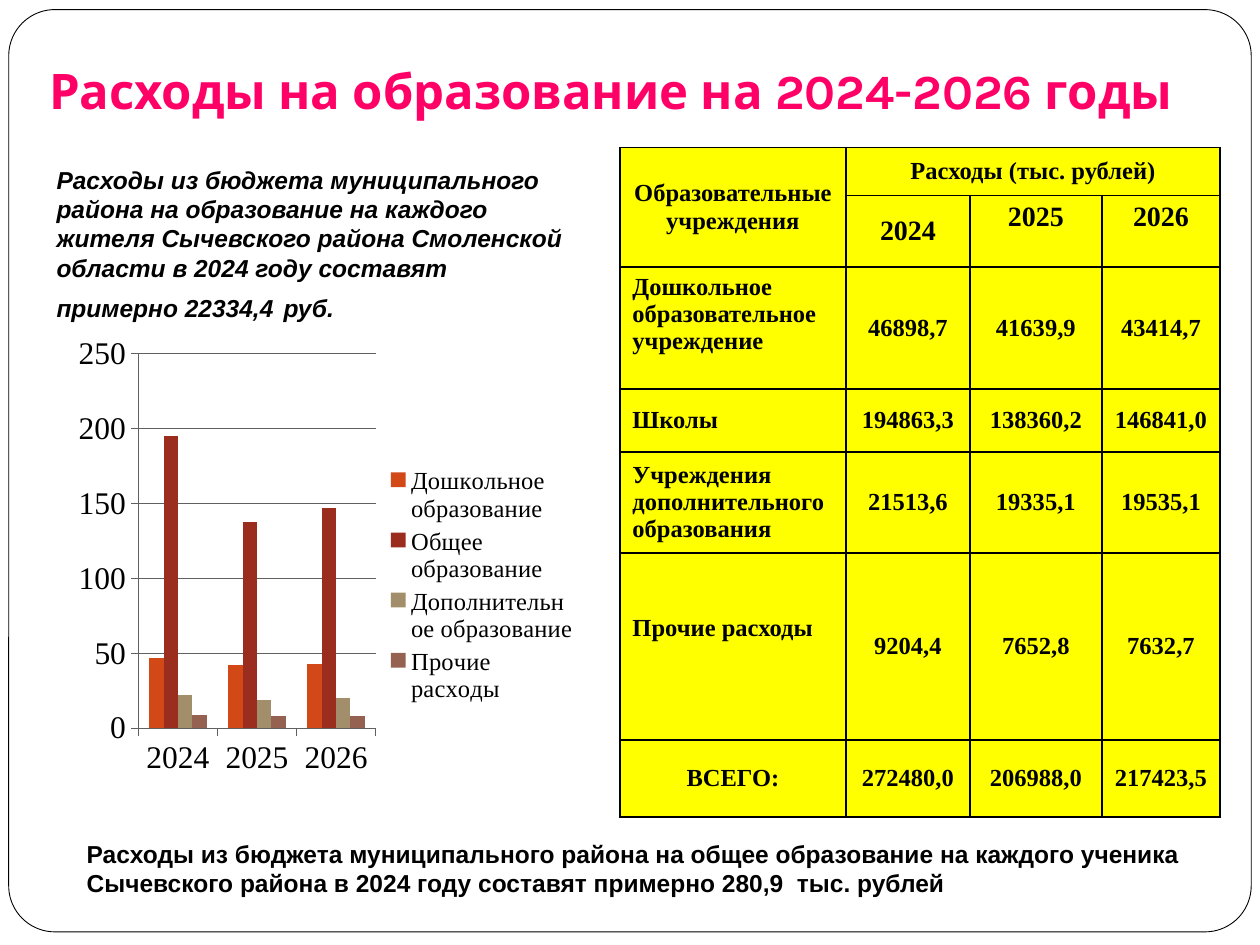
from lxml import etree
from pptx import Presentation
from pptx.chart.data import CategoryChartData
from pptx.dml.color import RGBColor
from pptx.enum.chart import XL_CHART_TYPE, XL_LEGEND_POSITION, XL_TICK_MARK
from pptx.enum.shapes import MSO_SHAPE
from pptx.enum.text import MSO_ANCHOR, PP_ALIGN
from pptx.oxml import parse_xml
from pptx.oxml.ns import nsdecls, qn
from pptx.util import Pt

BLACK = RGBColor(0, 0, 0)
WHITE = RGBColor(0xFF, 0xFF, 0xFF)
PINK = RGBColor(0xFF, 0x00, 0x66)
YELLOW = RGBColor(0xFF, 0xFF, 0x00)
GREY = RGBColor(0x60, 0x60, 0x60)
TOP, MIDDLE, BOTTOM = MSO_ANCHOR.TOP, MSO_ANCHOR.MIDDLE, MSO_ANCHOR.BOTTOM
LEFT, CENTER, JUSTIFY = PP_ALIGN.LEFT, PP_ALIGN.CENTER, PP_ALIGN.JUSTIFY
SERIF = "Times New Roman"


def add_run(paragraph, text, size, font, color=BLACK, italic=False):
    run = paragraph.add_run()
    run.text = text
    run.font.size = Pt(size)
    run.font.name = font
    run.font.bold = True
    run.font.italic = italic
    run.font.color.rgb = color


def add_text(left, top, width, height, anchor, align, runs):
    frame = slide.shapes.add_textbox(Pt(left), Pt(top), Pt(width), Pt(height)).text_frame
    frame.word_wrap = True
    frame.vertical_anchor = anchor
    frame.paragraphs[0].alignment = align
    for run in runs:
        add_run(frame.paragraphs[0], *run)
    return frame


deck = Presentation()
deck.slide_width, deck.slide_height = Pt(720), Pt(540)
slide = deck.slides.add_slide(deck.slide_layouts[6])

border = slide.shapes.add_shape(MSO_SHAPE.ROUNDED_RECTANGLE, Pt(5), Pt(5.5), Pt(710), Pt(527))
border.adjustments[0] = 0.05
border.shadow.inherit = False
border.fill.solid()
border.fill.fore_color.rgb = WHITE
border.line.color.rgb = BLACK
border.line.width = Pt(0.5)

title = add_text(0, 20, 698, 55.5, BOTTOM, CENTER, [
    ("Расходы на образование на 2024-2026 годы", 28, "Karla", PINK)])
title.margin_bottom = Pt(7.2)

HEAD_ROWS = 2
rows = [
    ["Образовательные учреждения", "Расходы (тыс. рублей)", "", ""],
    ["", "2024", "2025", "2026"],
    ["Дошкольное образовательное учреждение", "46898,7", "41639,9", "43414,7"],
    ["Школы", "194863,3", "138360,2", "146841,0"],
    ["Учреждения\nдополнительного\nобразования", "21513,6", "19335,1", "19535,1"],
    ["Прочие расходы", "9204,4", "7652,8", "7632,7"],
    ["ВСЕГО:", "272480,0", "206988,0", "217423,5"],
]
row_heights = [27.4, 38.2, 69.8, 36, 53.7, 107, 44]
column_widths = [129.3, 70.7, 75.5, 67.5]
top_cells = {(1, 2), (1, 3), (2, 0), (5, 0)}
label_aligns = {2: JUSTIFY, 3: JUSTIFY, 4: JUSTIFY, 5: LEFT}

costs = slide.shapes.add_table(len(rows), len(column_widths), Pt(354.2), Pt(84.3),
                               Pt(sum(column_widths)), Pt(sum(row_heights))).table
for column, width in zip(costs.columns, column_widths):
    column.width = Pt(width)
for row, height in zip(costs.rows, row_heights):
    row.height = Pt(height)
costs.cell(0, 0).merge(costs.cell(1, 0))
costs.cell(0, 1).merge(costs.cell(0, 3))

for r, texts in enumerate(rows):
    for c, text in enumerate(texts):
        cell = costs.cell(r, c)
        cell.fill.solid()
        cell.fill.fore_color.rgb = YELLOW
        cell.vertical_anchor = TOP if (r, c) in top_cells else MIDDLE
        for i, side in enumerate(("lnL", "lnR", "lnT", "lnB")):
            cell_props = cell._tc.get_or_add_tcPr()
            cell_props.insert(i, parse_xml(
                f'<a:{side} {nsdecls("a")} w="12700"><a:solidFill>'
                f'<a:srgbClr val="{BLACK}"/></a:solidFill></a:{side}>'))
        if not text:
            continue
        for i, line in enumerate(text.split("\n")):
            frame = cell.text_frame
            paragraph = frame.add_paragraph() if i else frame.paragraphs[0]
            paragraph.alignment = label_aligns.get(r, CENTER) if c == 0 else CENTER
            add_run(paragraph, line, 16 if r == HEAD_ROWS - 1 else 14, SERIF)
costs.cell(5, 0).margin_top = Pt(35.5)

add_text(25.2, 88.6, 306, 102.2, MIDDLE, LEFT, [
    ("Расходы из бюджета муниципального района на образование на каждого жителя "
     "Сычевского района Смоленской области в 2024 году составят примерно 22334,4",
     14, "Arial", BLACK, True),
    (" ", 20, "Arial", BLACK, True),
    ("руб.", 14, "Arial", BLACK, True)])
add_text(42.5, 479.5, 648, 33, MIDDLE, LEFT, [
    ("Расходы из бюджета муниципального района на общее образование на каждого ученика "
     "Сычевского района в 2024 году составят примерно 280,9  тыс. рублей", 14, "Arial")])

spending = [
    ("Дошкольное образование", (47, 42, 43), RGBColor(0xD3, 0x48, 0x17)),
    ("Общее образование", (195, 138, 147), RGBColor(0x9B, 0x2D, 0x1F)),
    ("Дополнительное образование", (22, 19, 20), RGBColor(0xA2, 0x8E, 0x6A)),
    ("Прочие расходы", (9, 8, 8), RGBColor(0x95, 0x62, 0x51)),
]
chart_data = CategoryChartData()
chart_data.categories = ["2024", "2025", "2026"]
for name, values, color in spending:
    chart_data.add_series(name, values)
chart = slide.shapes.add_chart(XL_CHART_TYPE.COLUMN_CLUSTERED, Pt(22.3), Pt(185.8),
                               Pt(315.4), Pt(297.4), chart_data).chart
chart.has_title = False
chart.font.size = Pt(18)
chart.font.name = SERIF
chart.font.color.rgb = BLACK
chart.has_legend = True
chart.legend.position = XL_LEGEND_POSITION.RIGHT
chart.legend.include_in_layout = False
chart.legend.font.size = Pt(14)
chart.legend.font.name = SERIF
chart.legend.font.color.rgb = BLACK

bars = chart.plots[0]
bars.gap_width = 150
bars.overlap = 0
bars.vary_by_categories = False
for series, (name, values, color) in zip(bars.series, spending):
    series.format.fill.solid()
    series.format.fill.fore_color.rgb = color
for axis in (chart.category_axis, chart.value_axis):
    axis.major_tick_mark = XL_TICK_MARK.OUTSIDE
    axis.format.line.color.rgb = GREY
chart.value_axis.minimum_scale = 0
chart.value_axis.maximum_scale = 250
chart.value_axis.major_unit = 50
chart.value_axis.major_gridlines.format.line.color.rgb = GREY

plot_area = chart._chartSpace.chart.plotArea
for old_layout in plot_area.findall(qn("c:layout")):
    plot_area.remove(old_layout)
layout = etree.Element(qn("c:layout"))
manual = etree.SubElement(layout, qn("c:manualLayout"))
for tag, value in (("layoutTarget", "inner"), ("xMode", "edge"), ("yMode", "edge"),
                   ("x", "0.18"), ("y", "0.055"), ("w", "0.43"), ("h", "0.72")):
    etree.SubElement(manual, qn(f"c:{tag}")).set("val", value)
plot_area.insert(0, layout)

deck.save("out.pptx")
